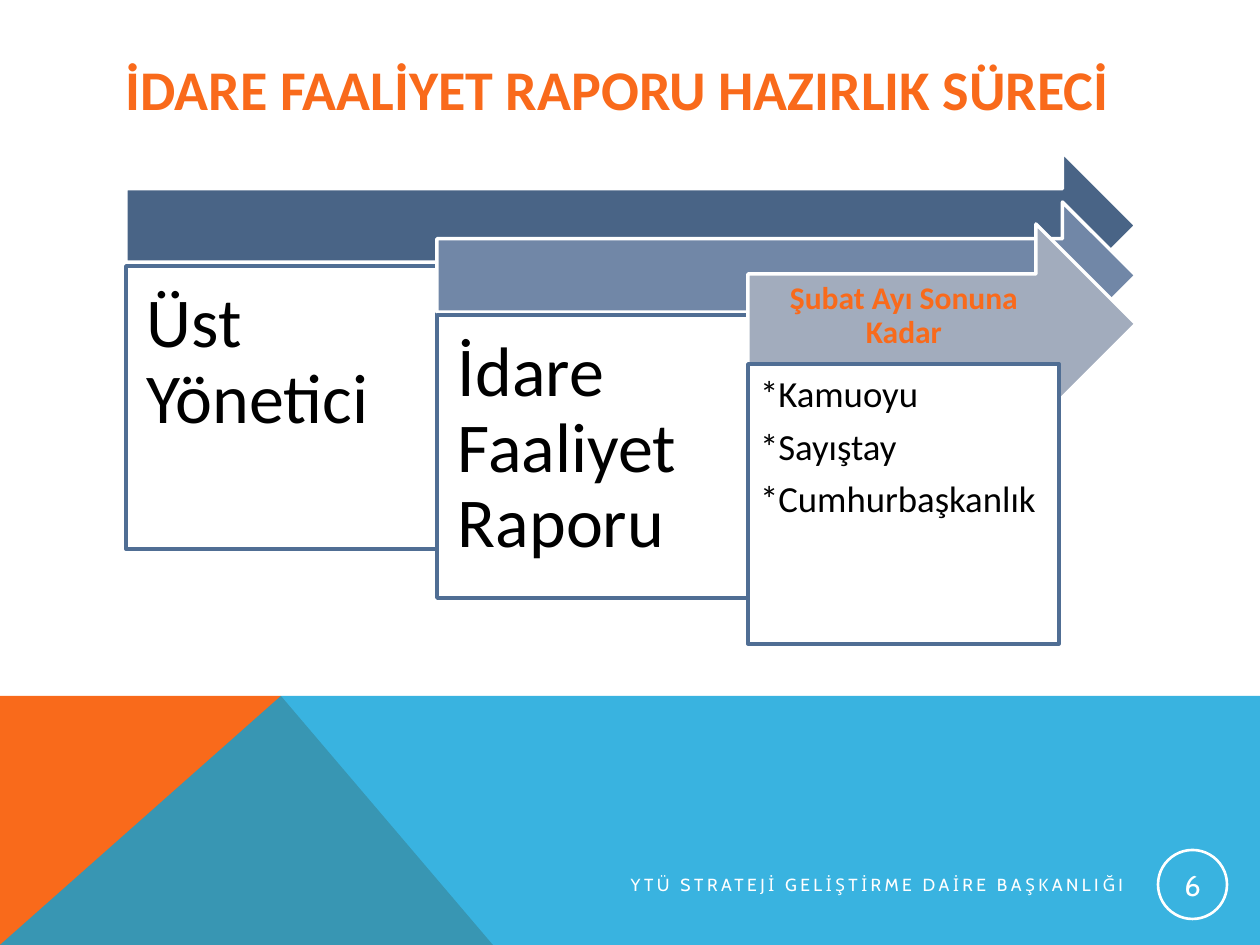
from lxml import etree
from pptx import Presentation
from pptx import util as u
from pptx.dml.color import RGBColor
from pptx.enum import shapes, text
from pptx.oxml.ns import qn

PX = u.Inches(1) / 126
KIND = shapes.MSO_SHAPE
ALIGN = text.PP_ALIGN
ANCHOR = text.MSO_ANCHOR
ORANGE, WHITE, BLUE = "F96A1B", "FFFFFF", "506E94"


def px(num):
    return u.Emu(round(num * PX))


def tint(code):
    return RGBColor.from_string(code)


def apply(obj, vals):
    for key, val in vals.items():
        setattr(obj, key, val)


class Deck:
    """Hold the style and the current slide, and draw each kind of element."""

    def __init__(self):
        self.prs = Presentation()
        self.prs.slide_width, self.prs.slide_height = px(1260), px(945)
        self.slide = self.prs.slides.add_slide(self.prs.slide_layouts[6])
        self.items = self.slide.shapes
        self.font = "Calibri"

    def paint(self, shape, fill=None, line=None, width=2):
        shape.shadow.inherit = False
        if fill:
            shape.fill.solid()
            shape.fill.fore_color.rgb = tint(fill)
        else:
            shape.fill.background()
        if line:
            shape.line.color.rgb = tint(line)
            shape.line.width = u.Pt(width)
        else:
            shape.line.fill.background()
        return shape

    def area(self, points, fill, alpha=None):
        draft = self.items.build_freeform(*points[0], scale=PX)
        draft.add_line_segments(points[1:], close=True)
        shape = self.paint(draft.convert_to_shape(), fill)
        if alpha:
            node = shape._element.spPr.find(qn("a:solidFill")).find(qn("a:srgbClr"))
            etree.SubElement(node, qn("a:alpha")).set("val", str(alpha * 1000))

    def shape(self, kind, box, fill=None, line=WHITE, width=2):
        new = self.items.add_shape(kind, *map(px, box))
        return self.paint(new, fill, line, width)

    def label(self, box, lines, size, color, **form):
        return self.letter(self.items.add_textbox(*map(px, box)), lines, size, color, **form)

    def letter(self, shape, lines, size, color, pad=(13, 6, 13, 6), anchor=ANCHOR.MIDDLE,
               font=None, bold=False, track=0, **para):
        frame = shape.text_frame
        sides = ("margin_left", "margin_top", "margin_right", "margin_bottom")
        apply(frame, {"word_wrap": True, "vertical_anchor": anchor,
                      **dict(zip(sides, map(px, pad)))})
        for num, words in enumerate(lines):
            item = frame.add_paragraph() if num else frame.paragraphs[0]
            apply(item, {"alignment": ALIGN.LEFT, **para})
            run = item.add_run()
            run.text = words
            apply(run.font, {"name": font or self.font, "size": u.Pt(size), "bold": bold})
            run.font.color.rgb = tint(color)
            if track:
                run._r.get_or_add_rPr().set("spc", str(track * 100))
        return shape


def main():
    deck = Deck()
    deck.area([(0, 945), (0, 696), (281, 696), (493, 945)], ORANGE)
    deck.area([(0, 945), (281, 696), (1260, 696), (1260, 945)], "08A1D9", 80)
    deck.label((113, 50, 1036, 76), ["İDARE FAALİYET RAPORU HAZIRLIK SÜRECİ"],
               32, ORANGE, bold=True)

    left, wide, right = 126, 311, 1136
    steps = [
        (152, 147, "496486", 283, ["Üst Yönetici"], 40, 21),
        (202, 147, "7187A7", 283, ["İdare Faaliyet Raporu"], 40, 21),
        (224, 200, "A2ACBD", 280, ["*Kamuoyu", "*Sayıştay", "*Cumhurbaşkanlık"], 21, 12),
    ]
    for num, (top, high, fill, deep, lines, size, pad) in enumerate(steps):
        x = left + num * wide
        deck.shape(KIND.RIGHT_ARROW, (x, top, right - x, high), fill)
        if num == 2:
            deck.label((x, 274, 338, 100), ["Şubat Ayı Sonuna Kadar"], 18, ORANGE,
                       pad=(9, 9, 35, 24), bold=True, alignment=ALIGN.CENTER,
                       line_spacing=0.9)
        card = deck.shape(KIND.RECTANGLE, (x, 266 + num * 49, wide, deep), WHITE, BLUE)
        deck.letter(card, lines, size, "000000", pad=(pad,) * 4, anchor=ANCHOR.TOP,
                    line_spacing=0.9, space_after=u.Pt(size * 0.35))

    deck.label((485, 866, 651, 38), ["YTÜ STRATEJİ GELİŞTİRME DAİRE BAŞKANLIĞI"],
               10, WHITE, font="Cabin", track=2, alignment=ALIGN.RIGHT)
    badge = deck.shape(KIND.OVAL, (1158, 850, 69, 69), width=1.5)
    deck.letter(badge, ["6"], 16.5, WHITE, pad=(1,) * 4, font="Cabin",
                alignment=ALIGN.CENTER)
    deck.prs.save("out.pptx")


if __name__ == "__main__":
    main()
